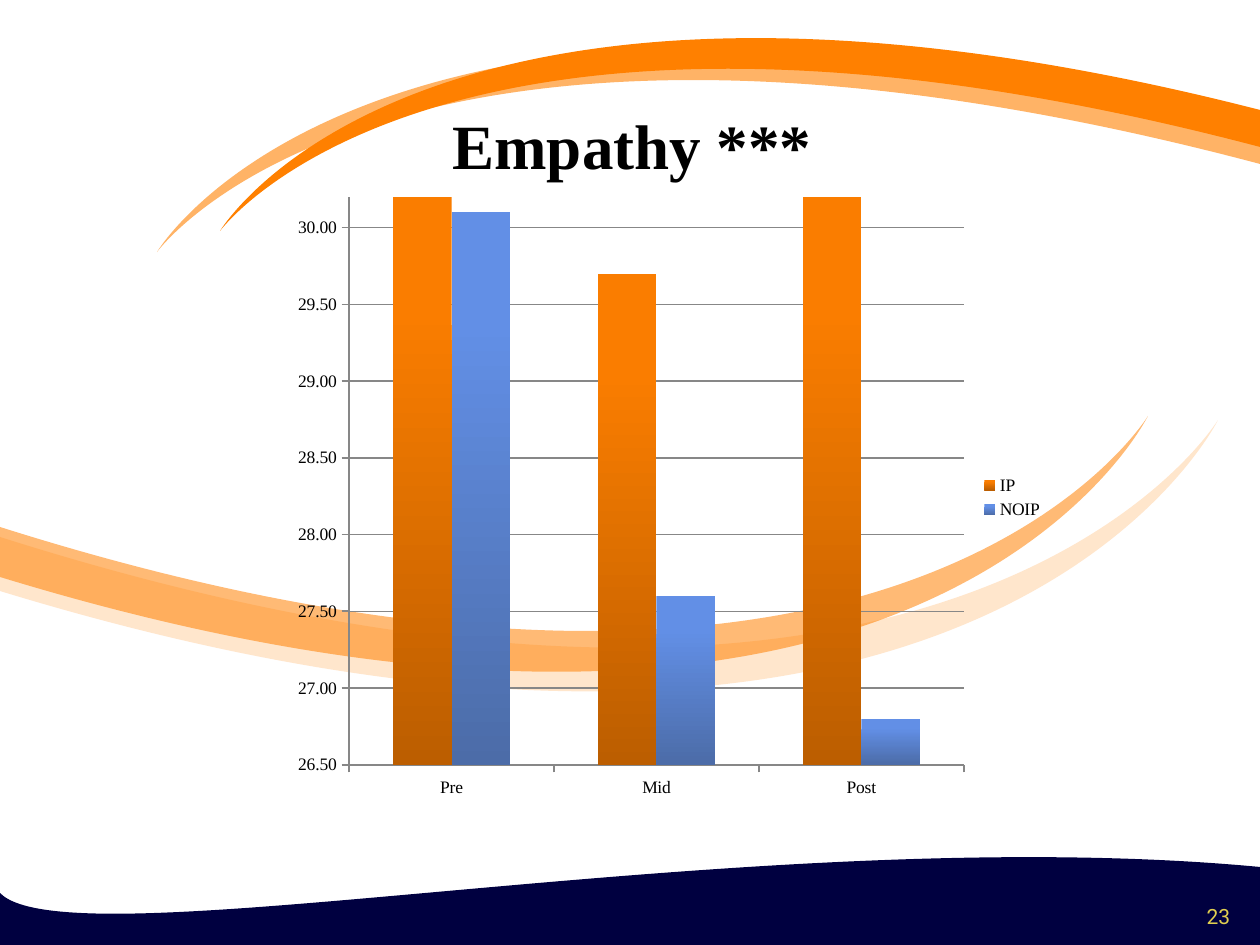
"""Build the Empathy slide: waves, title, column chart and page number."""
from lxml.etree import SubElement
from pptx import Presentation
from pptx.chart.data import CategoryChartData
from pptx.dml.color import RGBColor
from pptx.enum.chart import XL_CHART_TYPE, XL_LEGEND_POSITION, XL_TICK_MARK
from pptx.enum.text import MSO_ANCHOR, PP_ALIGN
from pptx.oxml import parse_xml
from pptx.oxml.ns import nsdecls, qn
from pptx.util import Pt

PX = 914400 / 126
SERIF = "Times New Roman"
COLORS = {
    "navy": "000040", "pale": "FFE6CC", "peach": "FFB366", "orange": "FF8000",
    "black": "000000", "gold": "E1CF50", "gray": "878787",
    "ip_top": "FA7D00", "ip_end": "BC5E00",
    "no_top": "628FE6", "no_end": "4C6CA8",
}


def rgb(name):
    return RGBColor.from_string(COLORS[name])


def write(shape, text, box, size, color, font, bold=False, anchor=MSO_ANCHOR.MIDDLE):
    shape.left, shape.top, shape.width, shape.height = [round(n * PX) for n in box]
    frame = shape.text_frame
    frame.word_wrap = True
    frame.vertical_anchor = anchor
    para = frame.paragraphs[0]
    para.alignment = PP_ALIGN.CENTER
    run = para.add_run()
    run.text = text
    run.font.size = Pt(size)
    run.font.name = font
    run.font.bold = bold
    run.font.color.rgb = rgb(color)


deck = Presentation()
deck.slide_width, deck.slide_height = round(1260 * PX), round(945 * PX)
slide = deck.slides.add_slide(deck.slide_layouts[5])
shapes = slide.shapes

waves = [
    ("navy", 100, [(0, 893), (71, 966), (751, 819), (1260, 867),
                   (1260, 893), (1261, 922), (1261, 950), (0, 946)]),
    ("pale", 100, [(0, 537), (961, 842), (1218, 420), (1218, 420),
                   (1218, 420), (985, 892), (0, 591)]),
    ("peach", 100, [(1260, 164), (389, -67), (157, 252), (157, 252),
                    (157, 252), (368, -105), (1260, 122)]),
    ("orange", 100, [(1260, 147), (440, -69), (220, 231), (220, 231),
                     (220, 231), (420, -105), (1260, 110)]),
    ("orange", 54, [(0, 527), (907, 814), (1148, 416), (1148, 416),
                    (1148, 416), (929, 861), (0, 577)]),
]
for color, alpha, nodes in waves:
    pen = shapes.build_freeform(*nodes[0], scale=PX)
    pen.add_line_segments(nodes[1:], close=True)
    wave = pen.convert_to_shape()
    sides = list(wave._element.iter(qn("a:lnTo")))
    for i in (0, 3):
        curve = parse_xml(f'<a:cubicBezTo {nsdecls("a")}/>')
        sides[i].addprevious(curve)
        for side in sides[i:i + 3]:
            curve.append(side[0])
            side.getparent().remove(side)
    wave.shadow.inherit = False
    wave.line.fill.background()
    wave.fill.solid()
    wave.fill.fore_color.rgb = rgb(color)
    if alpha < 100:
        tint = wave._element.spPr.find(".//" + qn("a:srgbClr"))
        SubElement(tint, qn("a:alpha"), val=str(alpha * 1000))

title = shapes.title
shapes._spTree.append(title._element)
write(title, "Empathy ***", (65, 66, 1134, 157), 36, "black", SERIF, bold=True)
page = shapes.add_textbox(0, 0, 0, 0)
write(page, "23", (1187, 869, 63, 66), 12, "gold", "Roboto", anchor=MSO_ANCHOR.BOTTOM)

data = CategoryChartData(number_format="###0.00")
data.categories = ["Pre", "Mid", "Post"]
data.add_series("IP", [30.2, 29.7, 30.2])
data.add_series("NOIP", [30.1, 27.6, 26.8])
wide, high = 774, 625
box = [round(n * PX) for n in (282, 185, wide, high)]
chart = shapes.add_chart(XL_CHART_TYPE.COLUMN_CLUSTERED, *box, data).chart
chart.has_title = False
chart.font.size = Pt(10)
chart.font.name = SERIF
chart.font.color.rgb = rgb("black")
chart.has_legend = True
chart.legend.position = XL_LEGEND_POSITION.RIGHT
chart.legend.include_in_layout = False

plot = chart.plots[0]
plot.gap_width = 150
plot.overlap = 0
plot.vary_by_categories = False
for series, key in zip(plot.series, ("ip", "no")):
    fill = series.format.fill
    fill.gradient()
    fill.gradient_angle = 270
    for stop, end, place in zip(fill.gradient_stops, ("_top", "_end"), (0.2, 1)):
        stop.color.rgb = rgb(key + end)
        stop.position = place

scale = chart.value_axis
scale.minimum_scale, scale.maximum_scale, scale.major_unit = 26.5, 30.2, 0.5
scale.has_major_gridlines = True
scale.tick_labels.number_format = "###0.00"
scale.tick_labels.number_format_is_linked = False
for axis in (scale, chart.category_axis):
    axis.major_tick_mark = XL_TICK_MARK.OUTSIDE
    axis.minor_tick_mark = XL_TICK_MARK.NONE
for part, width in ((scale, 1), (chart.category_axis, 1), (scale.major_gridlines, 0.75)):
    part.format.line.color.rgb = rgb("gray")
    part.format.line.width = Pt(width)

area = chart._chartSpace.chart.plotArea
for old in area.findall(qn("c:layout")):
    area.remove(old)
spots = "".join(f'<c:{tag} val="{val}"/>' for tag, val in (
    ("layoutTarget", "inner"), ("xMode", "edge"), ("yMode", "edge"),
    ("x", 67 / wide), ("y", 12 / high), ("w", 615 / wide), ("h", 568 / high)))
area.insert(0, parse_xml(
    f'<c:layout {nsdecls("c")}><c:manualLayout>{spots}</c:manualLayout></c:layout>'))

deck.save("out.pptx")
